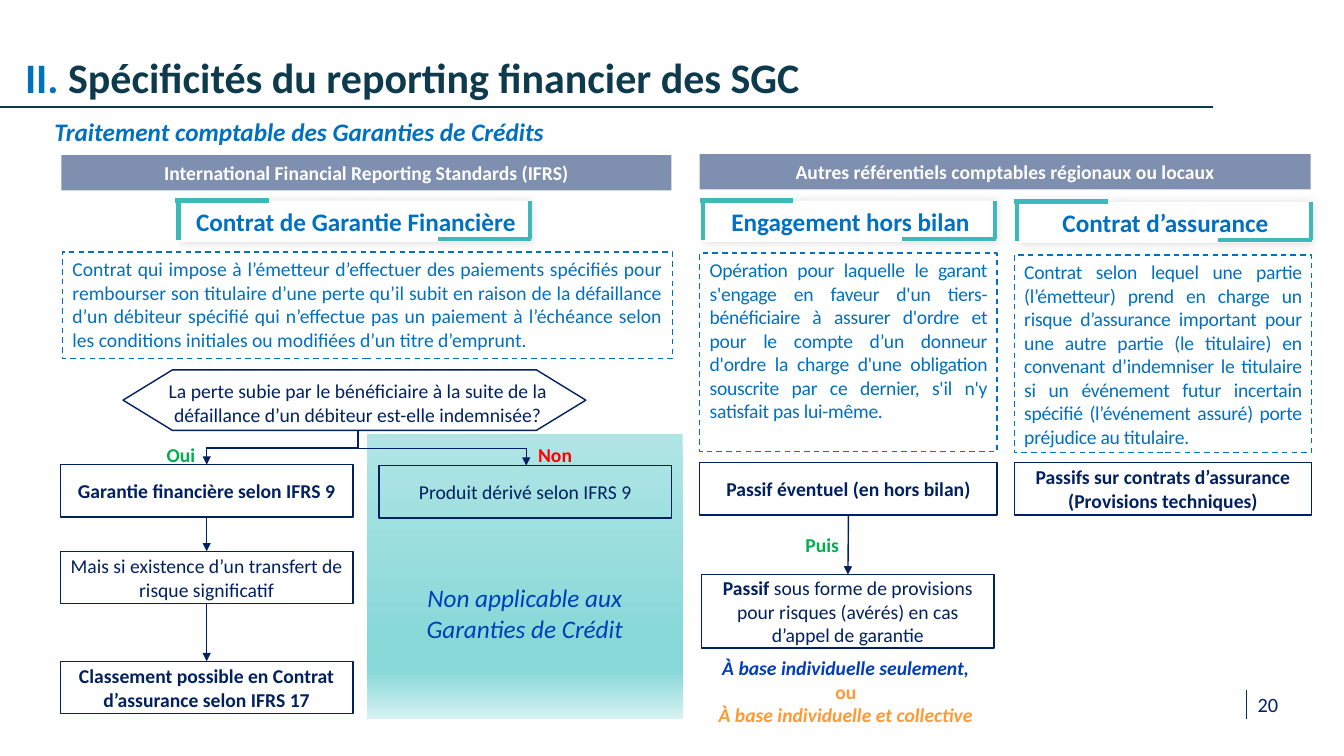
import pptx
import pptx.dml.color
import pptx.enum.dml
import pptx.enum.shapes
import pptx.enum.text
import pptx.oxml
import pptx.util
from dataclasses import dataclass

Inches = pptx.util.Inches
SHAPE = pptx.enum.shapes.MSO_SHAPE
LINK = pptx.enum.shapes.MSO_CONNECTOR
ALIGN = pptx.enum.text.PP_ALIGN
ANCHOR = pptx.enum.text.MSO_ANCHOR
DRAWING_NS = 'xmlns:a="http://schemas.openxmlformats.org/drawingml/2006/main"'


@dataclass(frozen=True)
class Theme:
    font: str = "Calibri"
    title_size: float = 30
    heading_size: float = 18
    number_size: float = 14.5
    body_size: float = 14
    blue: str = "0070C0"
    petrol: str = "0E3A4D"
    navy: str = "002060"
    royal: str = "003DB8"
    teal: str = "3DB9B9"
    green: str = "00B050"
    red: str = "FF0000"
    orange: str = "FF9933"
    white: str = "FFFFFF"
    divider: str = "003062"
    shadow: str = "404040"
    panel_stops: tuple = ((0, "B0E5E5"), (74, "88D8D8"), (83, "88D8D8"), (100, "D7F2F2"))


THEME = Theme()


def rgb(value):
    return pptx.dml.color.RGBColor.from_string(value)


def xml(markup):
    return pptx.oxml.parse_xml(markup.replace(">", f" {DRAWING_NS}>", 1))


def write(shape, *paragraphs, size=THEME.body_size, color=THEME.navy, bold=False, italic=False,
          align=ALIGN.CENTER, anchor=ANCHOR.MIDDLE, spacing=None, line_spacing=None, top=0.05):
    """Fill a shape; a paragraph is a string or a list of (text, overrides)."""
    frame = shape.text_frame
    frame.word_wrap = True
    frame.vertical_anchor = anchor
    frame.margin_top = Inches(top)
    for index, spans in enumerate(paragraphs):
        para = frame.add_paragraph() if index else frame.paragraphs[0]
        para.alignment = align
        para.line_spacing = line_spacing
        for text, change in ([(spans, {})] if isinstance(spans, str) else spans):
            span = para.add_run()
            span.text = text
            span.font.name = THEME.font
            span.font.size = pptx.util.Pt(size)
            span.font.bold = change.get("bold", bold)
            span.font.italic = change.get("italic", italic)
            span.font.color.rgb = rgb(change.get("color", color))
            if spacing is not None:
                span.font._element.set("spc", str(round(spacing * 100)))
    return shape


def label(page, box, *paragraphs, anchor=ANCHOR.TOP, **style):
    return write(page.shapes.add_textbox(*map(Inches, box)), *paragraphs, anchor=anchor, **style)


def block(page, box, fill=None, line=None, kind=SHAPE.RECTANGLE):
    shape = page.shapes.add_shape(kind, *map(Inches, box))
    shape.shadow.inherit = False
    if fill:
        shape.fill.solid()
        shape.fill.fore_color.rgb = rgb(fill)
    else:
        shape.fill.background()
    if line:
        shape.line.color.rgb = rgb(line)
        shape.line.width = pptx.util.Pt(1)
    else:
        shape.line.fill.background()
    return shape


def rule(page, start, end, color=THEME.navy, width=1, kind=LINK.STRAIGHT, arrow=False):
    line = page.shapes.add_connector(kind, *map(Inches, (*start, *end)))
    line.line.color.rgb = rgb(color)
    line.line.width = pptx.util.Pt(width)
    if arrow:
        line.line._get_or_add_ln().append(xml('<a:tailEnd type="triangle"/>'.replace("/>", "></a:tailEnd>")))
    line._element.spPr.append(xml("<a:effectLst></a:effectLst>"))
    return line


def join(page, upper, lower):
    """Straight arrow from the bottom of one box to the top of the next."""
    line = rule(page, (0, 0), (1, 1), arrow=True)
    line.begin_connect(upper, 2)
    line.end_connect(lower, 0)


def branch(page, start, end):
    """Elbow arrow that leaves downwards, runs sideways and ends downwards."""
    (x1, y1), (x2, y2) = start, end
    middle_x, middle_y = (x1 + x2) / 2, (y1 + y2) / 2
    side = 1 if x2 < x1 else -1
    half_w, half_h = side * (y2 - y1) / 2, abs(x2 - x1) / 2
    line = rule(page, (middle_x - half_w, middle_y - half_h),
                (middle_x + half_w, middle_y + half_h), kind=LINK.ELBOW, arrow=True)
    line._element.spPr.xfrm.set("rot", str((90 if side == 1 else 270) * 60000))


def banner(page, box, text):
    shape = block(page, box, fill=THEME.navy)
    shape.fill._xPr.find(".//{*}srgbClr").append(xml('<a:alpha val="50000"></a:alpha>'))
    write(shape, text, color=THEME.white, bold=True)


def heading(page, box, text):
    """White card with a shadow and teal brackets at two corners."""
    x, y, width, height = box
    card = block(page, (x + 0.02, y, width - 0.01, height), fill=THEME.white)
    card._element.spPr.find("{*}effectLst").append(xml(
        '<a:outerShdw blurRad="76200" dist="0" dir="0" algn="ctr" rotWithShape="0">'
        f'<a:srgbClr val="{THEME.shadow}"><a:alpha val="20000"/></a:srgbClr></a:outerShdw>'))
    write(card, text, size=THEME.heading_size, color=THEME.blue, bold=True)
    right, bottom, arm = x + width, y + height - 0.03, 0.93
    for start, end in (((x, y + 0.02), (x, bottom + 0.01)), ((x - 0.03, y), (x - 0.03 + arm, y)),
                       ((right, bottom), (right, y)), ((right + 0.01, bottom), (right + 0.01 - arm, bottom))):
        rule(page, start, end, color=THEME.teal, width=3)


def definition(page, box, text, spacing=None):
    shape = block(page, box, line=THEME.blue)
    shape.line.dash_style = pptx.enum.dml.MSO_LINE.DASH
    write(shape, text, color=THEME.blue, align=ALIGN.JUSTIFY, anchor=ANCHOR.TOP, spacing=spacing)


def step(page, box, text, bold=True):
    return write(block(page, box, line=THEME.navy), text, bold=bold)


def excluded_panel(page, box):
    panel = block(page, box, fill=THEME.teal)
    properties = panel._element.spPr
    stops = "".join(f'<a:gs pos="{place * 1000}"><a:srgbClr val="{color}"/></a:gs>'
                    for place, color in THEME.panel_stops)
    properties.replace(properties.find("{*}solidFill"), xml(
        f'<a:gradFill><a:gsLst>{stops}</a:gsLst><a:lin ang="5400000" scaled="0"/></a:gradFill>'))
    write(panel, "Non applicable aux Garanties de Crédit", size=THEME.heading_size,
          color=THEME.royal, italic=True, anchor=ANCHOR.TOP, top=1.47)


def header(page, box):
    x, y, width, height = box
    rule(page, (0, y + 0.55), (12.03, y + 0.55), color=THEME.petrol, width=1.5)
    label(page, box, [("II. ", {"color": THEME.blue}), ("Spécificités du reporting financier des SGC", {})],
          size=THEME.title_size, color=THEME.petrol, bold=True, align=ALIGN.LEFT,
          anchor=ANCHOR.MIDDLE, line_spacing=0.9)
    label(page, (x + 0.29, y + 0.59, 10.9, 0.4), "Traitement comptable des Garanties de Crédits",
          size=THEME.heading_size, color=THEME.blue, bold=True, italic=True, align=ALIGN.JUSTIFY)


def ifrs_region(page, box):
    x, y, width, height = box
    banner(page, (x, y, width, 0.35), "International Financial Reporting Standards (IFRS)")
    heading(page, (x + 1.16, y + 0.45, 3.49, 0.41), "Contrat de Garantie Financière")
    definition(page, (x + 0.01, y + 0.96, width, 1.06),
               "Contrat qui impose à l’émetteur d’effectuer des paiements spécifiés pour rembourser son "
               "titulaire d’une perte qu’il subit en raison de la défaillance d’un débiteur spécifié qui "
               "n’effectue pas un paiement à l’échéance selon les conditions initiales ou modifiées d’un "
               "titre d’emprunt.")
    excluded_panel(page, (x + 3.03, y + 2.77, 3.13, 2.82))
    derivative = (x + 3.15, y + 3.08, 2.9, 0.52)
    step(page, derivative, "Produit dérivé selon IFRS 9", bold=False)
    steps = [step(page, (x - 0.01, y + offset, 2.9, 0.52), text, bold) for offset, text, bold in (
        (3.07, "Garantie financière selon IFRS 9", True),
        (3.93, "Mais si existence d’un transfert de risque significatif", False),
        (5.02, "Classement possible en Contrat d’assurance selon IFRS 17", True))]
    for upper, lower in zip(steps, steps[1:]):
        join(page, upper, lower)
    fork = (x + 2.94, y + 2.74)
    branch(page, fork, (x + 1.44, y + 3.07))
    branch(page, fork, (derivative[0] + 1.46, derivative[1]))
    question = block(page, (x + 0.61, y + 2.13, 4.59, 0.6), line=THEME.navy, kind=SHAPE.HEXAGON)
    question.adjustments[0] = 0.816
    label(page, (x + 0.68, y + 2.17, 4.52, 0.57), "La perte subie par le bénéficiaire à la suite de la "
          "défaillance d’un débiteur est-elle indemnisée?")
    for offset, answer, color in ((0.88, "Oui", THEME.green), (4.59, "Non", THEME.red)):
        label(page, (x + offset, y + 2.8, 0.61, 0.34), answer, color=color, bold=True)


def other_region(page, box):
    x, y, width, height = box
    column = 2.95
    second = x + width - column + 0.01
    banner(page, (x, y, width, 0.35), "Autres référentiels comptables régionaux ou locaux")
    heading(page, (x + 0.03, y + 0.46, 2.9, 0.41), "Engagement hors bilan")
    heading(page, (second + 0.03, y + 0.47, 2.91, 0.41), "Contrat d’assurance")
    definition(page, (x, y + 0.98, column, 1.97),
               "Opération pour laquelle le garant s'engage en faveur d'un tiers-bénéficiaire à assurer "
               "d'ordre et pour le compte d’un donneur d'ordre la charge d'une obligation souscrite par "
               "ce dernier, s'il n'y satisfait pas lui-même.", spacing=-0.2)
    definition(page, (second, y + 1, column, 1.96),
               "Contrat selon lequel une partie (l’émetteur) prend en charge un risque d’assurance "
               "important pour une autre partie (le titulaire) en convenant d’indemniser le titulaire si "
               "un événement futur incertain spécifié (l’événement assuré) porte préjudice au titulaire.",
               spacing=-0.2)
    contingent = step(page, (x, y + 3.06, column, 0.52), "Passif éventuel (en hors bilan)")
    step(page, (second, y + 3.06, column, 0.52), "Passifs sur contrats d’assurance (Provisions techniques)")
    provision = step(page, (x + 0.02, y + 4.17, 2.9, 0.73), [
        ("Passif ", {}),
        ("sous forme de provisions pour risques (avérés) en cas d’appel de garantie", {"bold": False})])
    join(page, contingent, provision)
    label(page, (x + 0.91, y + 3.71, 0.61, 0.34), "Puis", color=THEME.green, bold=True)
    label(page, (x, y + 4.93, 2.9, 0.81),
          [("À base individuelle seulement,", {"color": THEME.royal})], [("ou", {"italic": False})],
          "À base individuelle et collective", color=THEME.orange, bold=True, italic=True)


def page_number(page, box):
    x, y, width, height = box
    label(page, box, "20", size=THEME.number_size)
    rule(page, (x + 0.31, y + 0.03), (x + 0.31, y + height), color=THEME.divider, width=0.5)


def main():
    deck = pptx.Presentation()
    deck.slide_width, deck.slide_height = Inches(13.33), Inches(7.5)
    page = deck.slides.add_slide(deck.slide_layouts[6])
    header(page, (0.15, 0.51, 11.5, 0.56))
    ifrs_region(page, (0.61, 1.54, 6.05, 5.59))
    other_region(page, (6.94, 1.53, 6.06, 5.74))
    page_number(page, (12.05, 6.82, 1.05, 0.31))
    deck.save("out.pptx")


if __name__ == "__main__":
    main()
